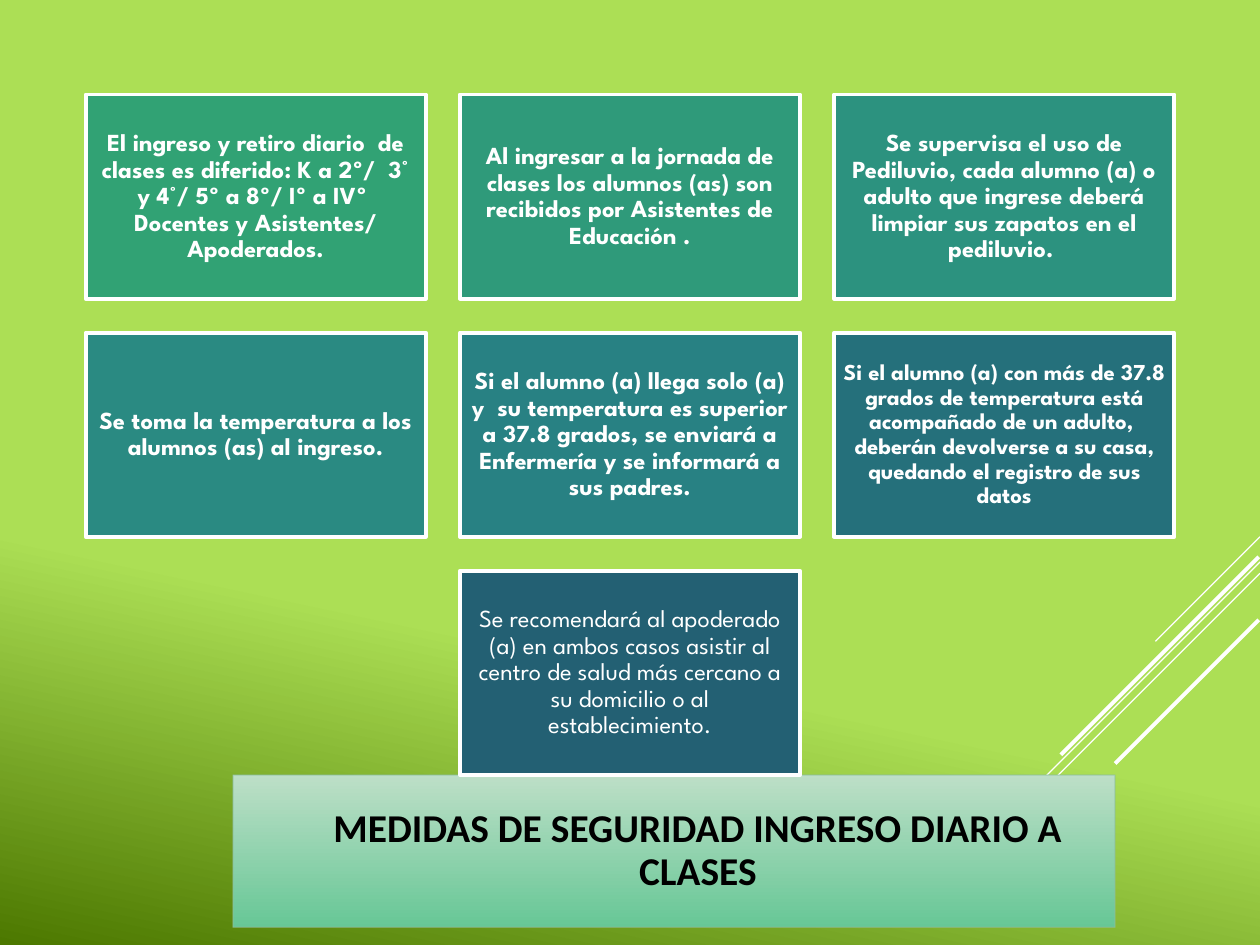
from lxml import etree
from pptx import Presentation
from pptx.dml.color import RGBColor
from pptx.enum.shapes import MSO_CONNECTOR, MSO_SHAPE
from pptx.enum.text import MSO_ANCHOR, PP_ALIGN
from pptx.oxml.ns import qn
from pptx.util import Inches, Pt

RECT = MSO_SHAPE.RECTANGLE
STRAIGHT = MSO_CONNECTOR.STRAIGHT
MIDDLE = MSO_ANCHOR.MIDDLE
CENTER = PP_ALIGN.CENTER

COLUMNS = 3
CARD_W, CARD_H = 2.7, 1.62
STEP_X, STEP_Y = 2.97, 1.89
MIDDLE_X, TOP = 3.65, 0.75

CARD = {"size": Pt(14), "name": "League Spartan", "bold": True}
SMALL_CARD = {**CARD, "size": Pt(13)}
PLAIN_CARD = {**CARD, "bold": False}
TITLE = {"size": Pt(22.5), "name": "Calibri", "bold": True}

MEASURES = [
    ("31A274", CARD, "El ingreso y retiro diario  de clases es diferido: K a 2º/  3° y 4°/ 5º a 8º/ "
                     "Iº a IVº  Docentes y Asistentes/ Apoderados."),
    ("2F9A7A", CARD, "Al ingresar a la jornada de clases los alumnos (as) son recibidos por "
                     "Asistentes de Educación ."),
    ("2C927F", CARD, "Se supervisa el uso de Pediluvio, cada alumno (a) o adulto que ingrese deberá "
                     "limpiar sus zapatos en el pediluvio. "),
    ("2A8A82", CARD, "Se toma la temperatura a los alumnos (as) al ingreso."),
    ("288183", CARD, "Si el alumno (a) llega solo (a) y  su temperatura es superior a 37.8 grados, "
                     "se enviará a Enfermería y se informará a sus padres."),
    ("25707B", SMALL_CARD, "Si el alumno (a) con más de 37.8 grados de temperatura está acompañado de "
                           "un adulto,  deberán devolverse a su casa, quedando el registro de sus datos"),
    ("236073", PLAIN_CARD, "Se recomendará al apoderado (a) en ambos casos asistir al centro de salud "
                           "más cercano a su domicilio o al establecimiento."),
]

# Start x, start y, horizontal run of each 45° stripe, line width
STRIPES = [
    (10, 4.26, 0.83, 0.75),
    (10, 4.46, 2.7, 0.75),
    (10, 4.55, 1.72, 0.75),
    (9.99, 4.42, 1.57, 2.25),
    (9.99, 4.92, 1.14, 2.25),
]


def rgb(color):
    return RGBColor.from_string(color)


def fill_gradient(fill, angle, stops):
    """Fill with (position, colour) stops; the angle runs counter-clockwise."""
    fill.gradient()
    fill.gradient_angle = angle
    for stop, (position, color) in zip(fill.gradient_stops, stops):
        stop.position = position
        stop.color.rgb = rgb(color)


def set_line(line, color, width):
    line.color.rgb = rgb(color)
    line.width = Pt(width)


def add_stripe(slide, x, y, run, width):
    line = slide.shapes.add_connector(
        STRAIGHT, Inches(x), Inches(y), Inches(x - run), Inches(y + run))
    set_line(line.line, "FFFFFF", width)
    etree.SubElement(line._element.spPr, qn("a:effectLst"))


def add_box(slide, x, y, w, h, text, font, color):
    sp = slide.shapes.add_shape(RECT, Inches(x), Inches(y), Inches(w), Inches(h))
    sp.shadow.inherit = False
    tf = sp.text_frame
    tf.word_wrap = True
    tf.vertical_anchor = MIDDLE
    p = tf.paragraphs[0]
    p.alignment = CENTER
    p.line_spacing = 0.9
    r = p.add_run()
    r.text = text
    r.font.color.rgb = rgb(color)
    for name, value in font.items():
        setattr(r.font, name, value)
    return sp


def add_card(slide, x, y, fill, font, text):
    sp = add_box(slide, x, y, CARD_W, CARD_H, text, font, "FFFFFF")
    sp.fill.solid()
    sp.fill.fore_color.rgb = rgb(fill)
    set_line(sp.line, "FFFFFF", 2.25)
    for side in ("left", "top", "right", "bottom"):
        setattr(sp.text_frame, f"margin_{side}", Inches(0.06))


def add_cards(slide):
    """Lay the cards out in rows of three, centring a shorter last row."""
    for i, measure in enumerate(MEASURES):
        row, col = divmod(i, COLUMNS)
        in_row = min(COLUMNS, len(MEASURES) - row * COLUMNS)
        x = MIDDLE_X + (col - (in_row - 1) / 2) * STEP_X
        add_card(slide, x, TOP + row * STEP_Y, *measure)


def add_title(slide):
    sp = add_box(slide, 1.85, 6.15, 7, 1.21,
                 "MEDIDAS DE SEGURIDAD INGRESO DIARIO A CLASES", TITLE, "000000")
    fill_gradient(sp.fill, 270, [(0, "BDDFC7"), (1, "67C796")])
    set_line(sp.line, "8DBE9D", 0.75)
    line_color = sp.line._ln.find(".//" + qn("a:srgbClr"))
    etree.SubElement(line_color, qn("a:alpha"), val="60000")
    sp.text_frame.paragraphs[0]._p.get_or_add_pPr().set("marL", str(Inches(0.38)))


def main():
    prs = Presentation()
    prs.slide_width, prs.slide_height = Inches(10), Inches(7.5)
    slide = prs.slides.add_slide(prs.slide_layouts[6])
    fill_gradient(slide.background.fill, 258, [(0.66, "ACDF55"), (1, "4C7800")])
    for stripe in STRIPES:
        add_stripe(slide, *stripe)
    add_title(slide)
    add_cards(slide)
    prs.save("out.pptx")


if __name__ == "__main__":
    main()
